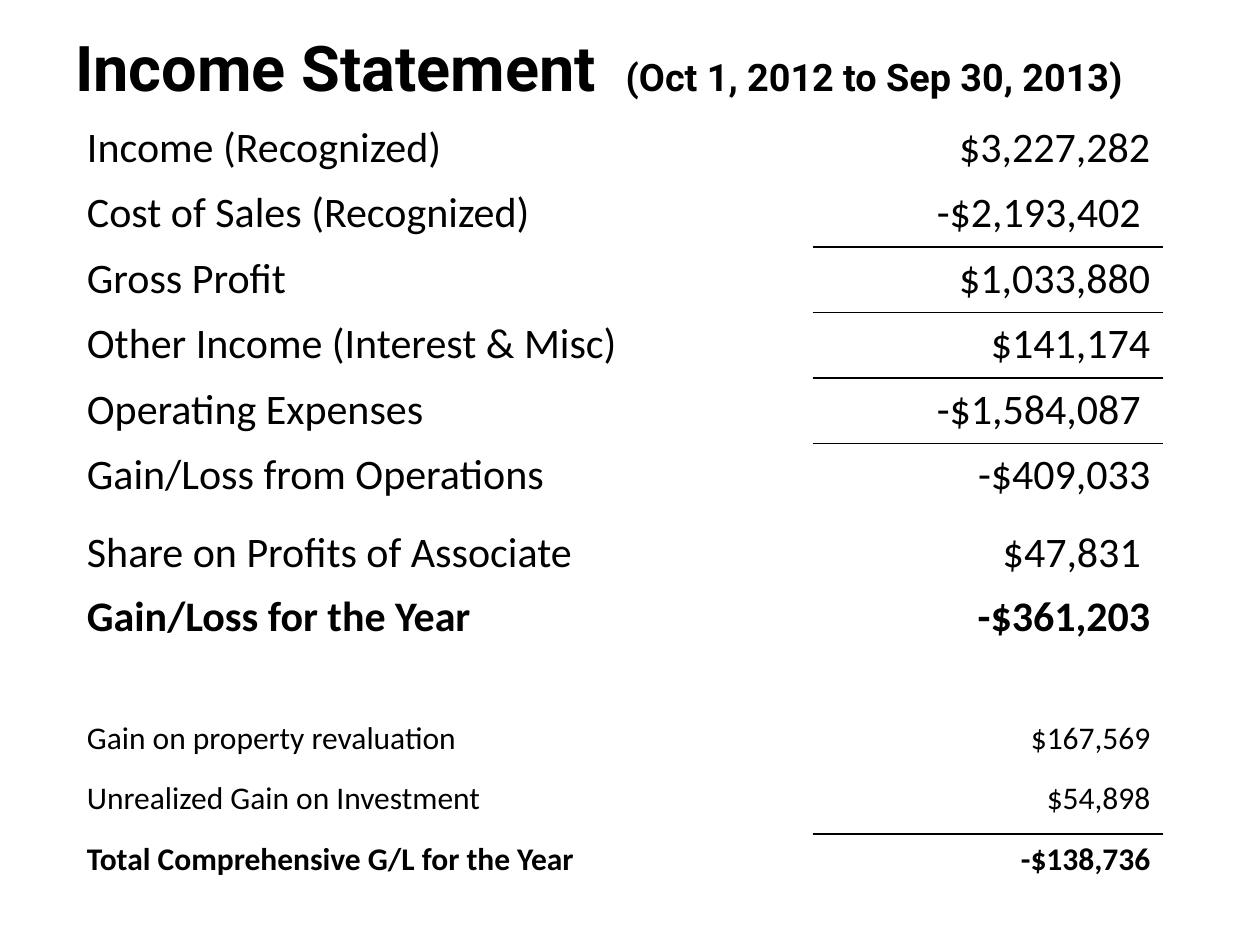
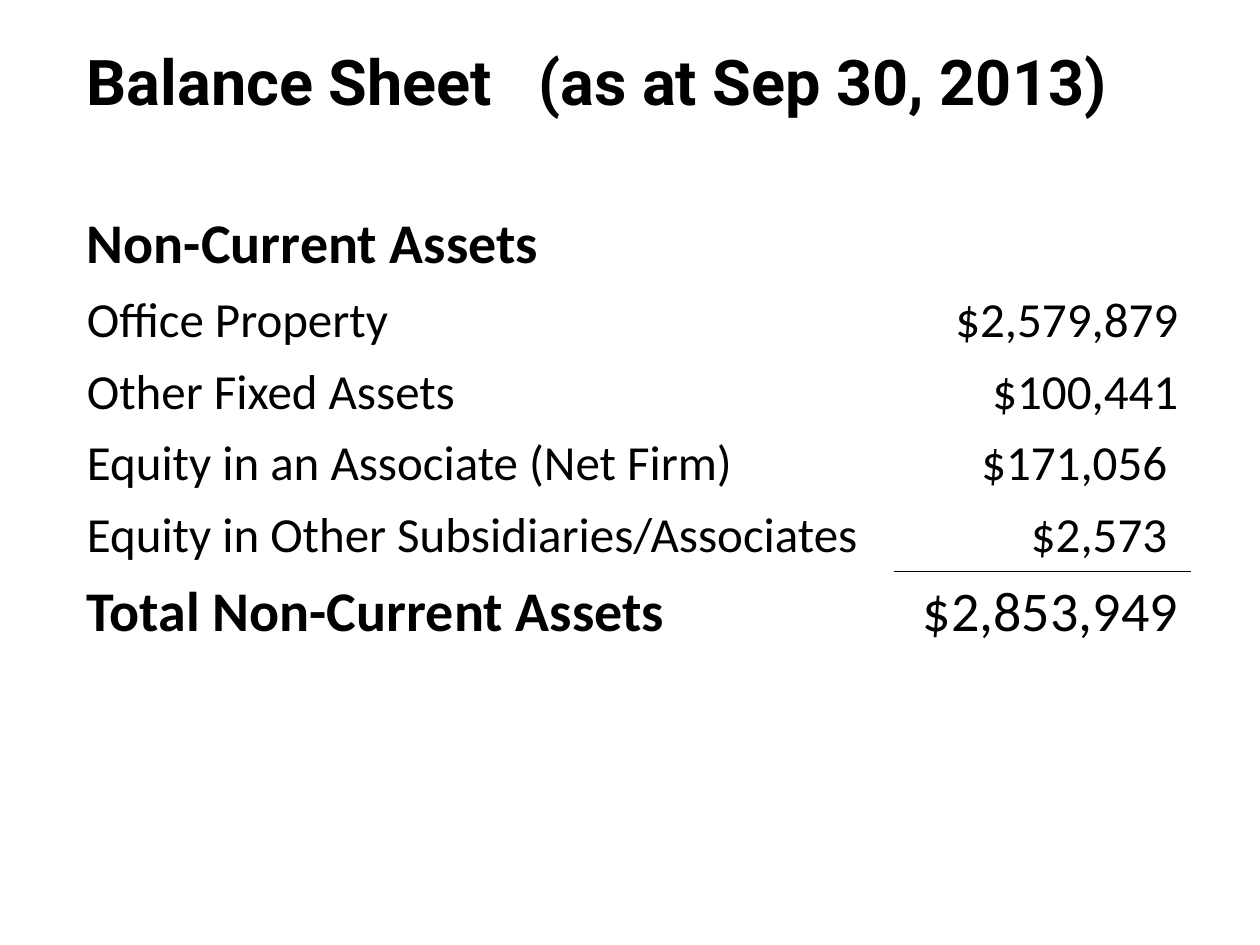
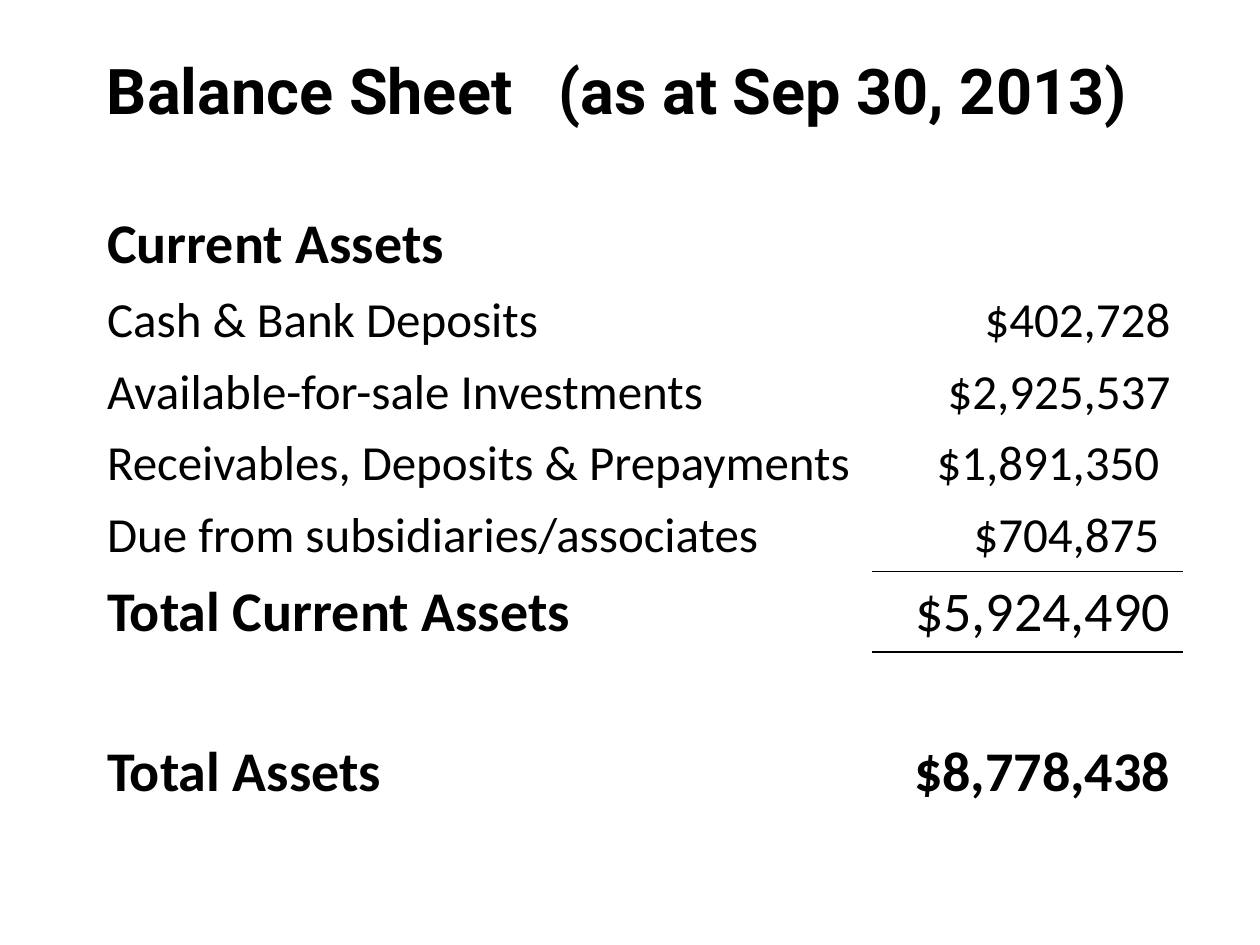
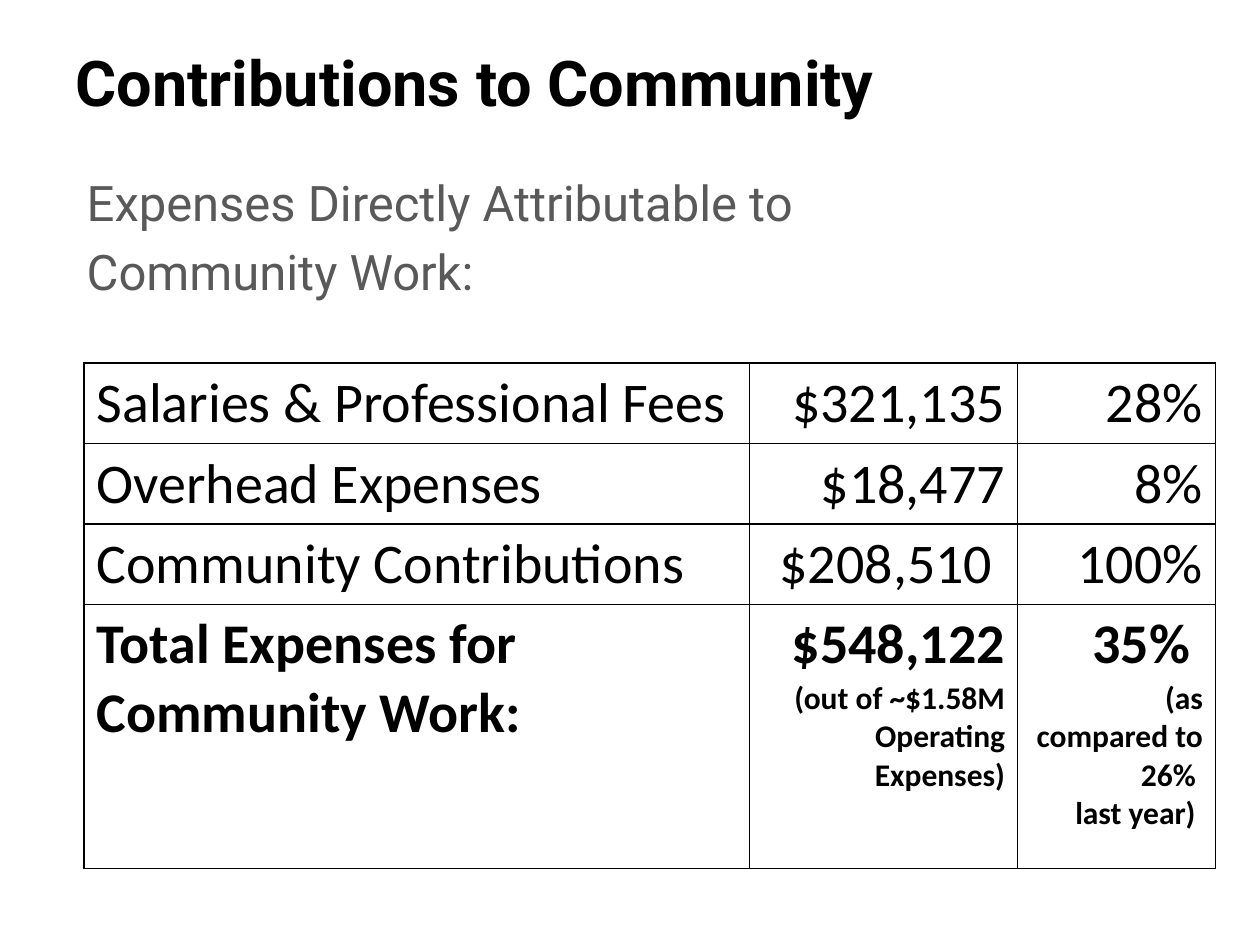
"""Builds four slides of yearly financial statements."""
from dataclasses import dataclass
from functools import partial

from lxml import etree
from pptx import Presentation
from pptx import util as u
from pptx.dml.color import RGBColor
from pptx.enum import text
from pptx.oxml import ns

BLACK, GREY = "000000", "595959"
TITLE_FONT, TABLE_FONT = "Roboto", "Calibri"
NOTE_SIZE = 18
PLAIN_STYLE = "{2D5ABB26-0587-4C30-8999-92F81FD0307C}"
SIDES = "LRTB"


@dataclass(frozen=True)
class Title:
    """A slide heading with an optional period set at a tab stop."""
    name: str
    left: float
    top: float
    width: float = 648
    height: float = 49.7
    period: str = ""
    period_size: float = 36
    tab: float = 0


@dataclass(frozen=True)
class Row:
    """A table row; lines after the first in a cell are notes."""
    cells: tuple[str, ...]
    size: float
    height: float
    bold_label: bool = False
    bold_amounts: bool = False
    ruled: bool = False


@dataclass(frozen=True)
class Statement:
    """A table of rows with a place and column widths."""
    left: float
    top: float
    widths: tuple[float, ...]
    rows: tuple[Row, ...]
    grid: bool = False


Entry = partial(Row, size=24, height=37.5)
Result = partial(Row, size=24, height=36.5)
Detail = partial(Row, size=18, height=34.5)
Asset = partial(Row, size=28, height=41)
Heading = partial(Row, size=32, height=46, bold_label=True)
Share = partial(Row, size=32, height=46)
BalanceTitle = partial(Title, "Balance Sheet", period="(as at Sep 30, 2013)", tab=258)

INCOME_TITLE = Title("Income Statement", 36, 9.4, 684, 56.9,
                     "(Oct 1, 2012 to Sep 30, 2013)", 21.6, 314.5)
OPERATIONS = Statement(42.5, 66.2, (421.9, 200.2), (
    Entry(("Income (Recognized)", "$3,227,282")),
    Entry(("Cost of Sales (Recognized)", "-$2,193,402 "), ruled=True),
    Entry(("Gross Profit", "$1,033,880"), ruled=True),
    Entry(("Other Income (Interest & Misc)", "$141,174")),
    Entry(("Operating Expenses", "-$1,584,087 "), ruled=True),
    Entry(("Gain/Loss from Operations", "-$409,033")),
))
YEAR_RESULT = Statement(42.5, 298.1, (421.9, 200.2), (
    Result(("Share on Profits of Associate", "$47,831 ")),
    Result(("Gain/Loss for the Year", "-$361,203"), bold_label=True, bold_amounts=True),
    Result(("", "")),
    Detail(("Gain on property revaluation", "$167,569")),
    Detail(("Unrealized Gain on Investment", "$54,898"), ruled=True),
    Detail(("Total Comprehensive G/L for the Year", "-$138,736"),
           bold_label=True, bold_amounts=True),
))
NON_CURRENT = Statement(42.5, 116.6, (468.5, 169.5), (
    Heading(("Non-Current Assets", "")),
    Asset(("Office Property", "$2,579,879")),
    Asset(("Other Fixed Assets", "$100,441")),
    Asset(("Equity in an Associate (Net Firm)", "$171,056 ")),
    Asset(("Equity in Other Subsidiaries/Associates", "$2,573 "), ruled=True),
    Heading(("Total Non-Current Assets", "$2,853,949")),
))
CURRENT = Statement(54, 116.6, (444.2, 177.8), (
    Heading(("Current Assets", "")),
    Asset(("Cash & Bank Deposits", "$402,728")),
    Asset(("Available-for-sale Investments", "$2,925,537")),
    Asset(("Receivables, Deposits & Prepayments", "$1,891,350 ")),
    Asset(("Due from subsidiaries/associates", "$704,875 "), ruled=True),
    Heading(("Total Current Assets", "$5,924,490")),
    Heading(("", "")),
    Heading(("Total Assets", "$8,778,438"), bold_amounts=True),
))
COMMUNITY = Statement(48, 207.4, (380.2, 153.4, 113), (
    Share(("Salaries & Professional Fees", "$321,135", "28%")),
    Share(("Overhead Expenses", "$18,477", "8%")),
    Share(("Community Contributions", "$208,510 ", "100%")),
    Row(("Total Expenses for Community Work:",
         "$548,122\n(out of ~$1.58M Operating Expenses)",
         "35% \n(as compared to 26% \nlast year) "),
        32, 151, bold_label=True, bold_amounts=True),
), grid=True)


def rgb(color: str) -> RGBColor:
    """Turn a hex string into a colour."""
    return RGBColor.from_string(color)


def style(r, font: str, size: float, color: str = BLACK, bold: bool = False) -> None:
    """Format one run."""
    r.font.name, r.font.size, r.font.bold = font, u.Pt(size), bold
    r.font.color.rgb = rgb(color)


def add_box(s, left: float, top: float, width: float, height: float):
    """Add a wrapping text box and return its text frame."""
    tf = s.shapes.add_textbox(u.Pt(left), u.Pt(top), u.Pt(width), u.Pt(height)).text_frame
    tf.word_wrap = True
    return tf


def add_title(s, title: Title) -> None:
    """Add the slide heading."""
    tf = add_box(s, title.left, title.top, title.width, title.height)
    tf.vertical_anchor = text.MSO_ANCHOR.MIDDLE
    p = tf.paragraphs[0]
    if title.period:
        tabs = etree.SubElement(p._p.get_or_add_pPr(), ns.qn("a:tabLst"))
        etree.SubElement(tabs, ns.qn("a:tab"), pos=str(u.Pt(title.tab)), algn="l")
    for words, size in ((title.name, 36), ("\t" + title.period, title.period_size)):
        if words.strip():
            r = p.add_run()
            r.text = words
            style(r, TITLE_FONT, size, bold=True)


def add_intro(s, lines: tuple[str, ...]) -> None:
    """Add the grey introduction."""
    tf = add_box(s, 42.5, 95, 648, 374.4)
    tf.text = "\n".join(lines)
    for i, p in enumerate(tf.paragraphs):
        p.space_before = u.Pt(5.6 if i else 0)
        style(p.runs[0], TITLE_FONT, 28, GREY)


def draw_borders(cell, sides: str) -> None:
    """Draw thin black lines on the given sides of a cell."""
    tc_pr = cell._tc.get_or_add_tcPr()
    for i, side in enumerate(c for c in SIDES if c in sides):
        ln = etree.Element(ns.qn(f"a:ln{side}"), w=str(u.Pt(1)))
        fill = etree.SubElement(ln, ns.qn("a:solidFill"))
        etree.SubElement(fill, ns.qn("a:srgbClr"), val=BLACK)
        tc_pr.insert(i, ln)


def fill_cell(cell, words: str, row: Row, is_label: bool) -> None:
    """Write and format one cell."""
    cell.fill.background()
    tf = cell.text_frame
    tf.text = words
    for i, p in enumerate(tf.paragraphs):
        p.alignment = text.PP_ALIGN.LEFT if is_label else text.PP_ALIGN.RIGHT
        for r in p.runs:
            style(r, TABLE_FONT, NOTE_SIZE if i else row.size,
                  bold=row.bold_label if is_label else row.bold_amounts)


def add_statement(s, st: Statement) -> None:
    """Add a table with its rules or grid."""
    table = s.shapes.add_table(
        len(st.rows), len(st.widths), u.Pt(st.left), u.Pt(st.top),
        u.Pt(sum(st.widths)), u.Pt(sum(row.height for row in st.rows))).table
    table.first_row = table.horz_banding = False
    table._tbl.tblPr.find(ns.qn("a:tableStyleId")).text = PLAIN_STYLE
    for column, width in zip(table.columns, st.widths):
        column.width = u.Pt(width)
    for i, row in enumerate(st.rows):
        table.rows[i].height = u.Pt(row.height)
        for j, words in enumerate(row.cells):
            cell = table.cell(i, j)
            fill_cell(cell, words, row, j == 0)
            if st.grid:
                draw_borders(cell, SIDES)
            elif j:
                above = "T" if i and st.rows[i - 1].ruled else ""
                draw_borders(cell, above + ("B" if row.ruled else ""))


def main() -> None:
    """Build and save the presentation."""
    prs = Presentation()
    prs.slide_width, prs.slide_height = u.Pt(720), u.Pt(540)
    pages = (
        (INCOME_TITLE, (), (OPERATIONS, YEAR_RESULT)),
        (BalanceTitle(left=42.5, top=20.9), (), (NON_CURRENT,)),
        (BalanceTitle(left=54, top=25.9), (), (CURRENT,)),
        (Title("Contributions to Community", 36, 21.6),
         ("Expenses Directly Attributable to", "Community Work:"), (COMMUNITY,)),
    )
    for title, intro, statements in pages:
        s = prs.slides.add_slide(prs.slide_layouts[6])
        add_title(s, title)
        if intro:
            add_intro(s, intro)
        for st in statements:
            add_statement(s, st)
    prs.save("out.pptx")


if __name__ == "__main__":
    main()
